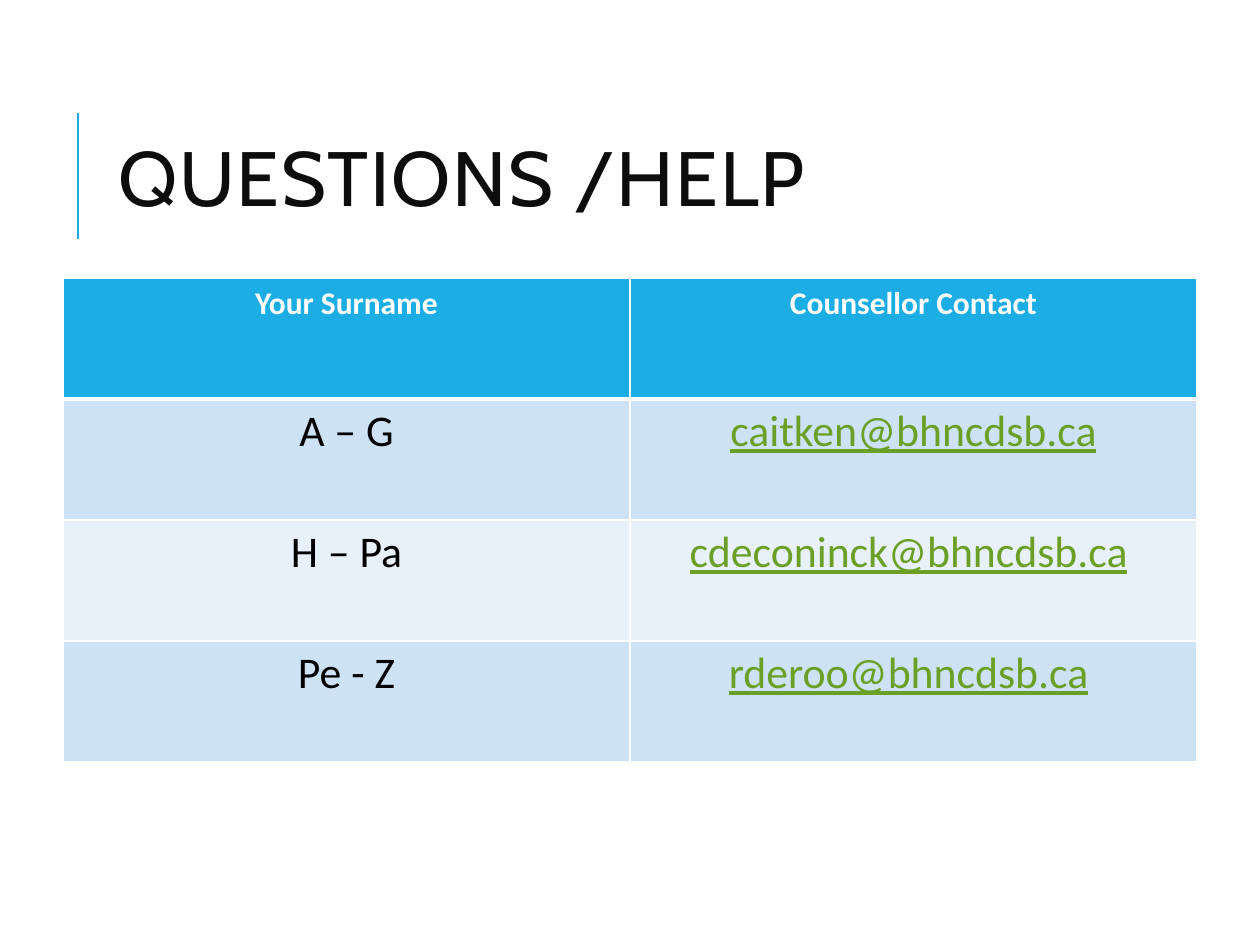
import pptx
import pptx.dml.color
import pptx.enum.shapes
import pptx.enum.text
import pptx.oxml
import pptx.oxml.ns
import pptx.util
from lxml import etree

RGBColor = pptx.dml.color.RGBColor
BLUE = RGBColor(0x1C, 0xAD, 0xE4)
PALE_BLUE = RGBColor(0xCD, 0xE3, 0xF5)
PALEST_BLUE = RGBColor(0xE8, 0xF1, 0xFA)
GREEN = RGBColor(0x6B, 0x9F, 0x25)
INK = RGBColor(0x0D, 0x0D, 0x0D)
BLACK = RGBColor(0, 0, 0)
WHITE = RGBColor(255, 255, 255)

EMU_PER_PX = 914400 // 126
HEADINGS = ["Your Surname", "Counsellor Contact"]
# surname range, e-mail address, plain text after the address
COUNSELLORS = [
    ("A – G", "caitken@bhncdsb.ca", ""),
    ("H – Pa", "cdeconinck@bhncdsb.ca", " "),
    ("Pe - Z", "rderoo@bhncdsb.ca", " "),
]


def px(length):
    return pptx.util.Emu(length * EMU_PER_PX)


class SlideBuilder:
    title_format = {"name": "Cabin", "size": pptx.util.Pt(44)}
    heading_format = {"name": "Calibri", "size": pptx.util.Pt(18), "bold": True}
    body_format = {"name": "Calibri", "size": pptx.util.Pt(25), "bold": False}
    email_format = {**body_format, "underline": True}

    def __init__(self, slide):
        self.slide = slide

    def add_run(self, paragraph, text, color, values):
        run = paragraph.add_run()
        run.text = text
        for name, value in values.items():
            setattr(run.font, name, value)
        run.font.color.rgb = color
        return run

    def add_title(self, text, left, top, width, height):
        box = self.slide.shapes.add_textbox(px(left), px(top), px(width), px(height))
        box.text_frame.word_wrap = True
        box.text_frame.vertical_anchor = pptx.enum.text.MSO_ANCHOR.MIDDLE
        paragraph = box.text_frame.paragraphs[0]
        paragraph.line_spacing = 0.8
        run = self.add_run(paragraph, text, INK, self.title_format)
        run.font._element.set("spc", "100")

    def add_line(self, x1, y1, x2, y2, color, weight):
        line = self.slide.shapes.add_connector(
            pptx.enum.shapes.MSO_CONNECTOR.STRAIGHT, px(x1), px(y1), px(x2), px(y2))
        line.line.color.rgb = color
        line.line.width = pptx.util.Pt(weight)
        etree.SubElement(line._element.spPr, pptx.oxml.ns.qn("a:effectLst"))

    def add_table(self, rows, columns, left, top, column_width, row_height):
        table = self.slide.shapes.add_table(
            rows, columns, px(left), px(top),
            px(column_width * columns), px(row_height * rows)).table
        for column in table.columns:
            column.width = px(column_width)
        for row in table.rows:
            row.height = px(row_height)
        return table

    def fill_cell(self, cell, runs, fill, top_weight=1, bottom_weight=1):
        """Write (text, color, format) runs into a bordered, filled cell."""
        paragraph = cell.text_frame.paragraphs[0]
        paragraph.alignment = pptx.enum.text.PP_ALIGN.CENTER
        for text, color, values in runs:
            if text:
                self.add_run(paragraph, text, color, values)
        weights = {"lnL": 1, "lnR": 1, "lnT": top_weight, "lnB": bottom_weight}
        properties = cell._tc.get_or_add_tcPr()
        for side, weight in weights.items():
            properties.append(pptx.oxml.parse_xml(
                f'<a:{side} {pptx.oxml.ns.nsdecls("a")} w="{pptx.util.Pt(weight)}">'
                f'<a:solidFill><a:srgbClr val="{WHITE}"/></a:solidFill></a:{side}>'))
        cell.fill.solid()
        cell.fill.fore_color.rgb = fill


def main():
    presentation = pptx.Presentation()
    presentation.slide_width = pptx.util.Inches(10)
    presentation.slide_height = pptx.util.Inches(7.5)
    builder = SlideBuilder(presentation.slides.add_slide(presentation.slide_layouts[6]))

    builder.add_line(78, 239, 78, 113, BLUE, 1.5)
    table = builder.add_table(len(COUNSELLORS) + 1, len(HEADINGS), 63, 278, 567, 121)
    for column, heading in enumerate(HEADINGS):
        builder.fill_cell(table.cell(0, column),
                          [(heading, WHITE, builder.heading_format)],
                          BLUE, bottom_weight=3)
    for row, (surnames, email, suffix) in enumerate(COUNSELLORS, start=1):
        fill = PALE_BLUE if row % 2 else PALEST_BLUE
        top_weight = 3 if row == 1 else 1
        contact = [(email, GREEN, builder.email_format),
                   (suffix, BLACK, builder.body_format)]
        builder.fill_cell(table.cell(row, 0), [(surnames, BLACK, builder.body_format)],
                          fill, top_weight)
        builder.fill_cell(table.cell(row, 1), contact, fill, top_weight)
    builder.add_title("QUESTIONS /HELP", 106, 81, 1004, 207)

    presentation.save("out.pptx")


if __name__ == "__main__":
    main()
